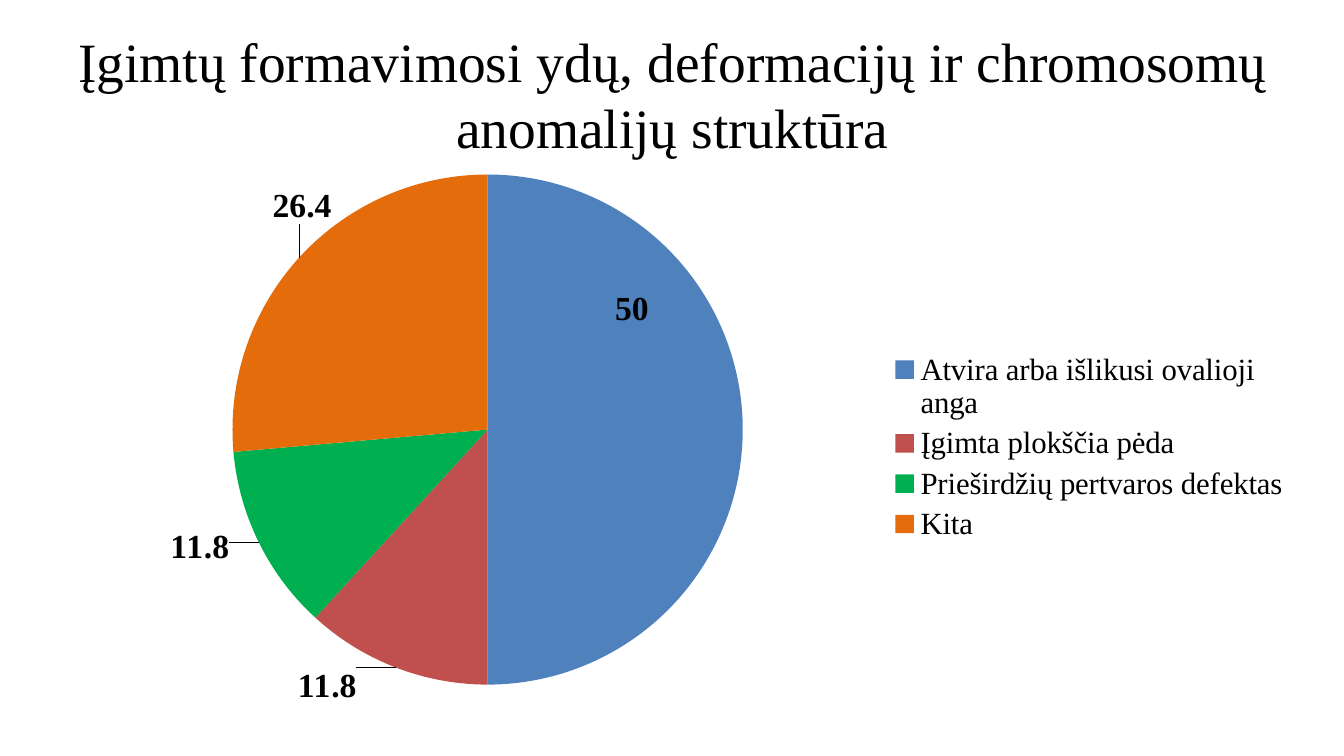
from pptx import Presentation
from pptx.chart.data import CategoryChartData
from pptx.dml.color import RGBColor
from pptx.enum.chart import XL_CHART_TYPE, XL_LABEL_POSITION, XL_LEGEND_POSITION
from pptx.enum.text import MSO_ANCHOR, PP_ALIGN
from pptx.oxml import parse_xml
from pptx.oxml.ns import nsdecls
from pptx.util import Inches, Pt

PIE = XL_CHART_TYPE.PIE
LEGEND_RIGHT = XL_LEGEND_POSITION.RIGHT
OUTSIDE = XL_LABEL_POSITION.OUTSIDE_END
MIDDLE = MSO_ANCHOR.MIDDLE
CENTER = PP_ALIGN.CENTER

SERIF = "Times New Roman"
TITLE = "Įgimtų formavimosi ydų, deformacijų ir chromosomų anomalijų struktūra"
# Name, value, colour, label shift as a share of the chart's width and height
SLICES = [
    ("Atvira arba išlikusi ovalioji anga", 50, "4F81BD", (-0.11, -0.21)),
    ("Įgimta plokščia pėda", 11.8, "C0504D", (-0.03, -0.01)),
    ("Prieširdžių pertvaros defektas", 11.8, "00B050", (-0.02, -0.03)),
    ("Kita", 26.4, "E46C0A", (0.03, -0.05)),
]


def colour(value):
    return RGBColor.from_string(value)


def set_font(font, size, name=SERIF, bold=False):
    font.size = Pt(size)
    font.name = name
    font.bold = bold
    font.color.rgb = colour("000000")


def manual_layout(inner=False, **places):
    """Make a c:layout element from places given as shares of the chart."""
    parts = ['<c:layoutTarget val="inner"/>'] if inner else []
    if "w" in places:
        parts += [f'<c:{axis}Mode val="edge"/>' for axis in "xy"]
    parts += [f'<c:{key} val="{share}"/>' for key, share in places.items()]
    return parse_xml(
        f'<c:layout {nsdecls("c")}><c:manualLayout>{"".join(parts)}'
        "</c:manualLayout></c:layout>"
    )


def replace_layout(parent, index, layout):
    for old in parent.xpath("c:layout"):
        parent.remove(old)
    parent.insert(index, layout)


def add_title(page, left, top, width, height):
    title = page.shapes.title
    title.left, title.top = Inches(left), Inches(top)
    title.width, title.height = Inches(width), Inches(height)
    frame = title.text_frame
    frame.word_wrap = True
    frame.vertical_anchor = MIDDLE
    para = frame.paragraphs[0]
    para.alignment = CENTER
    span = para.add_run()
    span.text = TITLE
    set_font(span.font, 39.6)


def style_slices(chart):
    series = chart.plots[0].series[0]
    labels = series.data_labels
    labels.show_value = True
    set_font(labels.font, 24, bold=True)
    for index, (_, _, fill, _) in enumerate(SLICES):
        point = series.points[index]
        point.format.fill.solid()
        point.format.fill.fore_color.rgb = colour(fill)
        set_font(point.data_label.font, 24, bold=True)
        point.data_label.position = OUTSIDE
    for label, (_, _, _, (x, y)) in zip(chart.element.xpath(".//c:dLbl"), SLICES):
        replace_layout(label, 1, manual_layout(x=x, y=y))


def add_pie(page, left, top, width, height):
    data = CategoryChartData()
    data.categories = [name for name, *_ in SLICES]
    data.add_series("Series 1", [value for _, value, *_ in SLICES])
    box = [Inches(length) for length in (left, top, width, height)]
    chart = page.shapes.add_chart(PIE, *box, data).chart
    chart.has_title = False
    set_font(chart.font, 18, "Calibri")
    chart.plots[0].vary_by_categories = True
    style_slices(chart)

    chart.has_legend = True
    chart.legend.position = LEGEND_RIGHT
    chart.legend.include_in_layout = False
    set_font(chart.legend.font, 22)
    legend = chart.element.xpath(".//c:legend")[0]
    replace_layout(legend, 1, manual_layout(x=0.66, y=0.33, w=0.33, h=0.35))
    plot_area = chart.element.xpath(".//c:plotArea")[0]
    replace_layout(plot_area, 0,
                   manual_layout(inner=True, x=0.12, y=0.03, w=0.42, h=0.89))


def main():
    deck = Presentation()
    deck.slide_width, deck.slide_height = Inches(13.33), Inches(7.5)
    page = deck.slides.add_slide(deck.slide_layouts[5])
    add_title(page, 0.67, 0.3, 12, 1.25)
    add_pie(page, 0.86, 1.55, 12.05, 5.71)
    deck.save("out.pptx")


if __name__ == "__main__":
    main()
